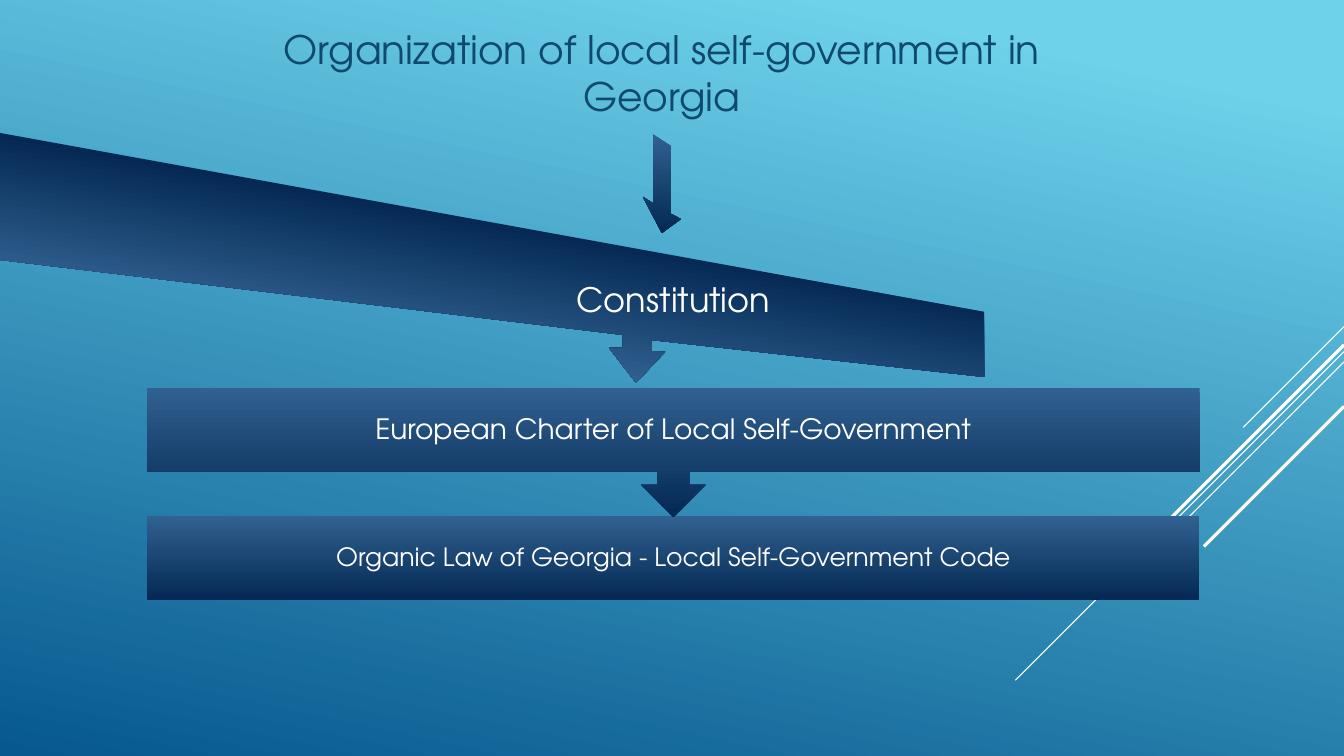
from lxml.etree import SubElement
from pptx import Presentation
from pptx.dml.color import RGBColor
from pptx.enum.shapes import MSO_CONNECTOR, MSO_SHAPE
from pptx.enum.text import MSO_ANCHOR, MSO_AUTO_SIZE, PP_ALIGN
from pptx.oxml.ns import qn
from pptx.util import Cm, Pt

FONT = "TeX Gyre Adventor"
SKY = RGBColor(0x6E, 0xD2, 0xEB)
OCEAN = RGBColor(0x06, 0x58, 0x8E)
STEEL = RGBColor(0x31, 0x61, 0x90)
NAVY = RGBColor(0x04, 0x28, 0x53)
TITLE_BLUE = RGBColor(0x0F, 0x49, 0x6F)
WHITE = RGBColor(0xFF, 0xFF, 0xFF)

SLIDE_WIDTH, SLIDE_HEIGHT = 33.87, 19.05
BOX_LEFT, BOX_WIDTH, BOX_HEIGHT = 3.71, 26.52, 2.12
CALLOUT_HEIGHT = 3.25
FIRST_TOP, STEP = 6.55, 3.23

LEVELS = [
    ("Constitution", 24, 0.48),
    ("European Charter of Local Self-Government", 20, 0.4),
    ("Organic Law of Georgia - Local Self-Government Code", 18, 0.36),
]
DIAGONALS = [
    (8.23, 2.54, 0.75),
    (8.86, 8.28, 0.75),
    (9.12, 5.27, 0.75),
    (8.69, 4.85, 2.25),
    (10.24, 3.53, 2.25),
]
BAND = [
    (0, 3.35), (24.8, 7.86), (24.8, 9.5), (16.43, 8.57), (16.43, 8.85),
    (16.76, 8.87), (16.03, 9.65), (15.35, 8.77), (15.7, 8.77),
    (15.7, 8.44), (0, 6.55),
]
ARROW = [
    (16.46, 3.38), (16.91, 3.68), (16.91, 5.39), (17.16, 5.52),
    (16.68, 5.87), (16.2, 4.96), (16.46, 5.12),
]


def set_gradient(fill, start, end, angle=270, positions=(0, 1)):
    fill.gradient()
    fill.gradient_angle = angle
    for stop, color, position in zip(fill.gradient_stops, (start, end), positions):
        stop.color.rgb = color
        stop.position = position


def style_shape(shape, *gradient):
    set_gradient(shape.fill, *gradient)
    shape.line.fill.background()
    shape.shadow.inherit = False


def write_text(shape, text, size, color, inset):
    frame = shape.text_frame
    frame.word_wrap = True
    frame.auto_size = MSO_AUTO_SIZE.NONE
    frame.vertical_anchor = MSO_ANCHOR.MIDDLE
    frame.margin_left = frame.margin_right = Cm(inset)
    frame.margin_top = frame.margin_bottom = Cm(inset)
    paragraph = frame.paragraphs[0]
    paragraph.text = text
    paragraph.alignment = PP_ALIGN.CENTER
    paragraph.font.name = FONT
    paragraph.font.size = Pt(size)
    paragraph.font.color.rgb = color
    return paragraph


def add_title(slide, text):
    title = slide.shapes.title
    title.left, title.top = Cm(4.83), Cm(0.86)
    title.width, title.height = Cm(23.7), Cm(1.91)
    write_text(title, text, 28, TITLE_BLUE, 0.25).line_spacing = 1.0


def add_diagonal(slide, top, reach, weight):
    line = slide.shapes.add_connector(
        MSO_CONNECTOR.STRAIGHT,
        Cm(SLIDE_WIDTH), Cm(top), Cm(SLIDE_WIDTH - reach), Cm(top + reach),
    )
    line.line.color.rgb = WHITE
    line.line.width = Pt(weight)
    SubElement(line._element.spPr, qn("a:effectLst"))


def add_outline(slide, points, *gradient):
    corners = [(Cm(x), Cm(y)) for x, y in points]
    builder = slide.shapes.build_freeform(*corners[0])
    builder.add_line_segments(corners[1:], close=True)
    style_shape(builder.convert_to_shape(), *gradient)


def add_box(slide, preset, top, height):
    shape = slide.shapes.add_shape(
        preset, Cm(BOX_LEFT), Cm(top), Cm(BOX_WIDTH), Cm(height)
    )
    style_shape(shape, STEEL, NAVY)


def add_label(slide, top, text, size, inset):
    label = slide.shapes.add_textbox(
        Cm(BOX_LEFT), Cm(top), Cm(BOX_WIDTH), Cm(BOX_HEIGHT)
    )
    write_text(label, text, size, WHITE, inset).line_spacing = 0.9


def main():
    presentation = Presentation()
    presentation.slide_width = Cm(SLIDE_WIDTH)
    presentation.slide_height = Cm(SLIDE_HEIGHT)
    slide = presentation.slides.add_slide(presentation.slide_layouts[5])
    set_gradient(slide.background.fill, SKY, OCEAN, 258, (0.1, 1))

    for diagonal in DIAGONALS:
        add_diagonal(slide, *diagonal)
    add_title(slide, "Organization of local self-government in Georgia")

    add_box(slide, MSO_SHAPE.RECTANGLE, FIRST_TOP + 2 * STEP, BOX_HEIGHT)
    add_box(slide, MSO_SHAPE.DOWN_ARROW_CALLOUT, FIRST_TOP + STEP, CALLOUT_HEIGHT)
    add_outline(slide, BAND, NAVY, STEEL, 260, (0.41, 0.74))
    for index, level in enumerate(LEVELS):
        add_label(slide, FIRST_TOP + index * STEP, *level)
    add_outline(slide, ARROW, STEEL, NAVY)

    presentation.save("out.pptx")


if __name__ == "__main__":
    main()
